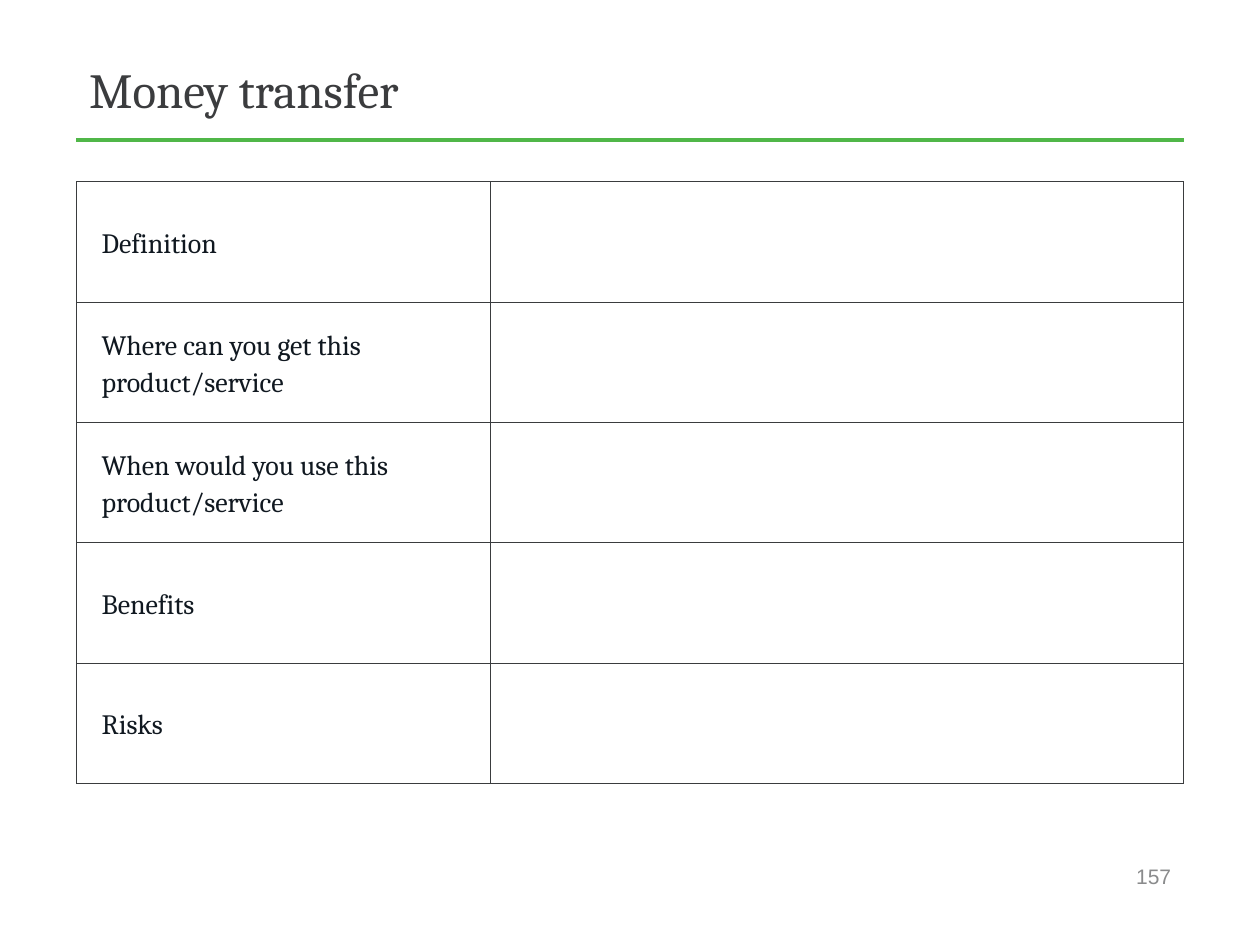
from lxml.etree import SubElement
from pptx import Presentation
from pptx.dml.color import RGBColor
from pptx.enum.shapes import MSO_CONNECTOR
from pptx.enum.text import MSO_ANCHOR, PP_ALIGN
from pptx.oxml.ns import qn
from pptx.util import Pt

COLORS = {"title": "3B3C3E", "rule": "50B748", "border": "3A3C3E",
          "body": "101820", "number": "8A8B8C", "cell": "FFFFFF"}
TOPICS = ["Definition", "Where can you get this product/service",
          "When would you use this product/service", "Benefits", "Risks"]


def rgb(name):
    return RGBColor.from_string(COLORS[name])


def format_text(p, size, font, color):
    for r in p.runs:
        r.font.size = Pt(size)
        r.font.name = font
        r.font.color.rgb = rgb(color)


def add_heading(s, text, left, top, width, height):
    line = s.shapes.add_connector(MSO_CONNECTOR.STRAIGHT, Pt(left), Pt(top + height),
                                  Pt(left + width), Pt(top + height))
    line.line.color.rgb = rgb("rule")
    line.line.width = Pt(2)
    SubElement(line._element.spPr, qn("a:effectLst"))

    title = s.shapes.title
    title.left, title.top, title.width, title.height = map(Pt, (left, top, width, height))
    tf = title.text_frame
    tf.text = text
    tf.vertical_anchor = MSO_ANCHOR.MIDDLE
    tf.paragraphs[0].alignment = PP_ALIGN.LEFT
    format_text(tf.paragraphs[0], 28, "Cambria", "title")


def set_borders(cell):
    tcPr = cell._tc.get_or_add_tcPr()
    for side in ("lnL", "lnR", "lnT", "lnB"):
        ln = SubElement(tcPr, qn(f"a:{side}"), w=str(Pt(0.25)))
        fill = SubElement(ln, qn("a:solidFill"))
        SubElement(fill, qn("a:srgbClr"), val=COLORS["border"])


def add_worksheet(s, topics, left, top, width, height):
    label_width = 236.3
    table = s.shapes.add_table(len(topics), 2, Pt(left), Pt(top), Pt(width), Pt(height)).table
    table.first_row = table.horz_banding = False
    table.columns[0].width = Pt(label_width)
    table.columns[1].width = Pt(width - label_width)
    for row, topic in zip(table.rows, topics):
        row.height = Pt(height / len(topics))
        for cell in row.cells:
            set_borders(cell)
            cell.fill.solid()
            cell.fill.fore_color.rgb = rgb("cell")
        label = row.cells[0]
        label.text = topic
        label.vertical_anchor = MSO_ANCHOR.MIDDLE
        label.margin_left = Pt(14.4)
        p = label.text_frame.paragraphs[0]
        p.line_spacing = 1.15
        format_text(p, 16, "Cambria", "body")


def add_page_number(s, number, left, top, width, height):
    tf = s.shapes.add_textbox(Pt(left), Pt(top), Pt(width), Pt(height)).text_frame
    tf.word_wrap = True
    tf.vertical_anchor = MSO_ANCHOR.MIDDLE
    tf.text = number
    tf.paragraphs[0].alignment = PP_ALIGN.RIGHT
    format_text(tf.paragraphs[0], 12, "Arial", "number")


def main():
    prs = Presentation()
    prs.slide_width, prs.slide_height = Pt(720), Pt(540)
    s = prs.slides.add_slide(prs.slide_layouts[5])
    left, width = 43.7, 632.6
    add_heading(s, "Money transfer", left, 21.6, width, 58.4)
    add_worksheet(s, TOPICS, left, 103.7, width, 344)
    add_page_number(s, "157", 448.3, 486, 228, 28.8)
    prs.save("out.pptx")


if __name__ == "__main__":
    main()
